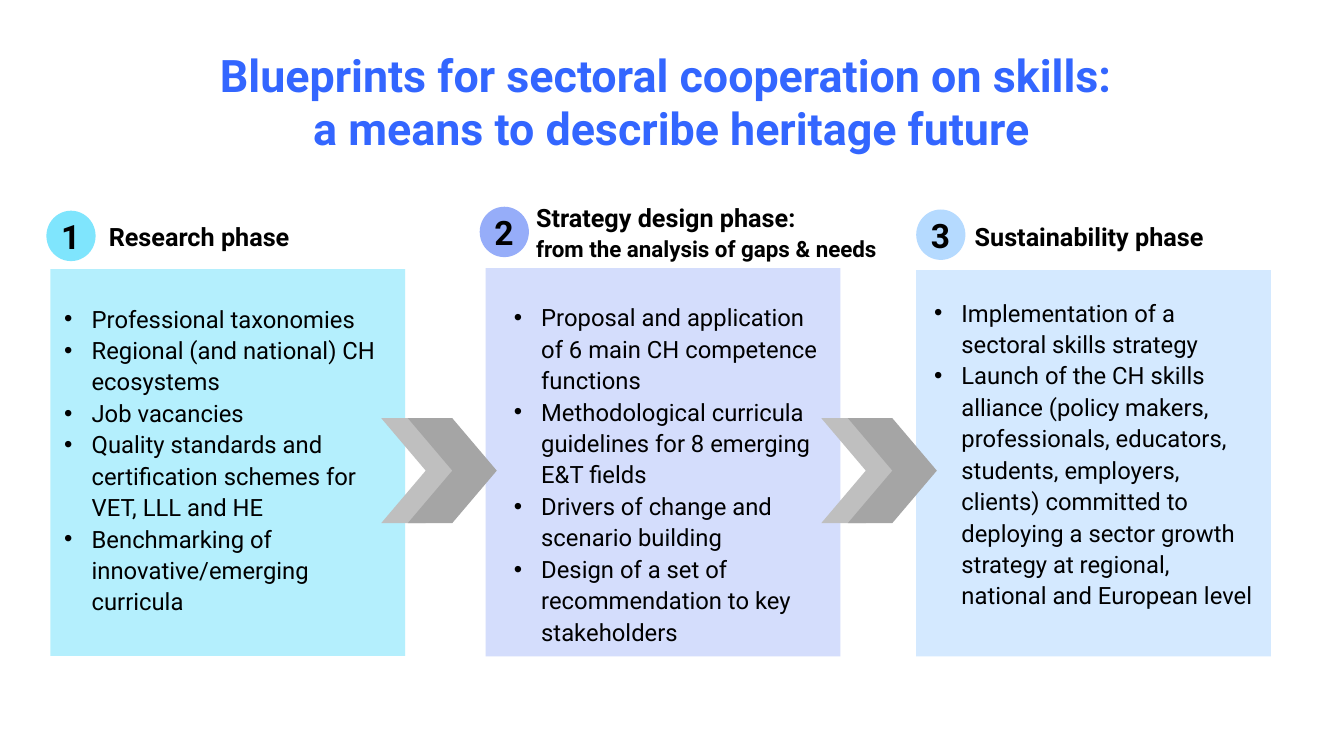
from lxml import etree
from pptx import Presentation
from pptx.dml.color import RGBColor
from pptx.enum.shapes import MSO_SHAPE
from pptx.enum.text import PP_ALIGN
from pptx.oxml.ns import qn
from pptx.util import Cm, Pt

RECT, OVAL, CHEVRON = MSO_SHAPE.RECTANGLE, MSO_SHAPE.OVAL, MSO_SHAPE.CHEVRON
LEFT, CENTER = PP_ALIGN.LEFT, PP_ALIGN.CENTER

COLORS = {
    "title": "3366FF", "text": "000000",
    "cyan": "7FE5FD", "periwinkle": "B5C5FA", "indigo": "96ADF9", "sky": "B5DAFF",
    "light_gray": "BFBFBF", "gray": "A5A5A5",
}

# Boxes are (left, top, width, height) in cm; heading lines are (text, size)
PHASES = [
    {
        "card": (1.27, 6.78, 8.94, 9.75), "card_color": "cyan",
        "badge": (1.17, 5.31), "badge_color": "cyan",
        "heading": (2.11, 5.44, 5.82, 1.02), "align": CENTER, "spacing": 1.0,
        "heading_lines": [("Research phase", 18)],
        "body": (1.27, 7.47, 8.66, 8.0),
        "items": [
            "Professional taxonomies",
            "Regional (and national) CH ecosystems",
            "Job vacancies",
            "Quality standards and certification schemes for VET, LLL and HE",
            "Benchmarking of innovative/emerging curricula",
        ],
    },
    {
        "card": (12.24, 6.76, 8.94, 9.78), "card_color": "periwinkle",
        "badge": (12.09, 5.21), "badge_color": "indigo",
        "heading": (13.26, 4.9, 10.54, 1.85), "align": LEFT, "spacing": 1.1,
        "heading_lines": [("Strategy design phase:", 18),
                          ("from the analysis of gaps & needs", 16)],
        "body": (12.6, 7.44, 8.46, 8.48),
        "items": [
            "Proposal and application of 6 main CH competence functions",
            "Methodological curricula guidelines for 8 emerging E&T fields",
            "Drivers of change and scenario building",
            "Design of a set of recommendation to key stakeholders",
        ],
    },
    {
        "card": (23.09, 6.81, 8.94, 9.73), "card_color": "sky",
        "badge": (23.09, 5.28), "badge_color": "sky",
        "heading": (23.5, 5.46, 7.9, 1.02), "align": CENTER, "spacing": 1.0,
        "heading_lines": [("Sustainability phase", 18)],
        "body": (23.19, 7.32, 8.81, 9.09),
        "items": [
            "Implementation of a sectoral skills strategy",
            "Launch of the CH skills alliance (policy makers, professionals, "
            "educators, students, employers, clients) committed to deploying a "
            "sector growth strategy at regional, national and European level",
        ],
    },
]


class SlideBuilder:
    font = "Roboto"

    def __init__(self, slide):
        self.s = slide

    def shape(self, kind, box, color, opacity=None, parent=None):
        shapes = (parent or self.s).shapes
        sp = shapes.add_shape(kind, *map(Cm, box))
        sp.shadow.inherit = False
        sp.line.fill.background()
        sp.fill.solid()
        sp.fill.fore_color.rgb = RGBColor.from_string(COLORS[color])
        if opacity:
            clr = sp.fill._xPr.find(qn("a:solidFill"))[0]
            etree.SubElement(clr, qn("a:alpha")).set("val", str(opacity * 1000))
        return sp

    def text(self, box, lines, color="text", bold=True, align=LEFT,
             spacing=1.0, bullets=False, parent=None):
        shapes = (parent or self.s).shapes
        tf = shapes.add_textbox(*map(Cm, box)).text_frame
        tf.word_wrap = True
        tf.text = "\n".join(line for line, _ in lines)
        for p, (_, size) in zip(tf.paragraphs, lines):
            p.alignment = align
            p.line_spacing = spacing
            if bullets:
                self.bullet(p)
            font = p.runs[0].font
            font.name, font.size, font.bold = self.font, Pt(size), bold
            font.color.rgb = RGBColor.from_string(COLORS[color])

    def bullet(self, p):
        pPr = p._p.get_or_add_pPr()
        pPr.set("marL", str(Cm(0.79)))
        pPr.set("indent", str(-Cm(0.69)))
        etree.SubElement(pPr, qn("a:buFont")).set("typeface", "Arial")
        etree.SubElement(pPr, qn("a:buChar")).set("char", "•")

    def badge(self, number, left, top, color):
        group = self.s.shapes.add_group_shape()
        self.shape(OVAL, (left, top, 1.24, 1.27), color, parent=group)
        self.text((left + 0.12, top + 0.01, 0.99, 1.27), [(str(number), 24)],
                  parent=group)

    def double_chevron(self, left, top):
        for offset, color in ((0, "light_gray"), (0.67, "gray")):
            self.shape(CHEVRON, (left + offset, top, 2.24, 2.64), color)


def main():
    prs = Presentation()
    prs.slide_width, prs.slide_height = Cm(33.87), Cm(19.05)
    slide = SlideBuilder(prs.slides.add_slide(prs.slide_layouts[6]))

    # Title
    slide.text((2.39, 1.07, 29.08, 3.0),
               [("Blueprints for sectoral cooperation on skills: ", 32),
                ("a means to describe heritage future", 32)],
               color="title", align=CENTER)

    # Phase columns
    for number, phase in enumerate(PHASES, 1):
        slide.shape(RECT, phase["card"], phase["card_color"], opacity=58)
        slide.text(phase["body"], [(item, 17) for item in phase["items"]],
                   bold=False, spacing=1.1, bullets=True)
        slide.text(phase["heading"], phase["heading_lines"],
                   align=phase["align"], spacing=phase["spacing"])
        slide.badge(number, *phase["badge"], phase["badge_color"])

    # Arrows between the columns
    for left in (9.61, 20.7):
        slide.double_chevron(left, 10.54)

    prs.save("out.pptx")


if __name__ == "__main__":
    main()
